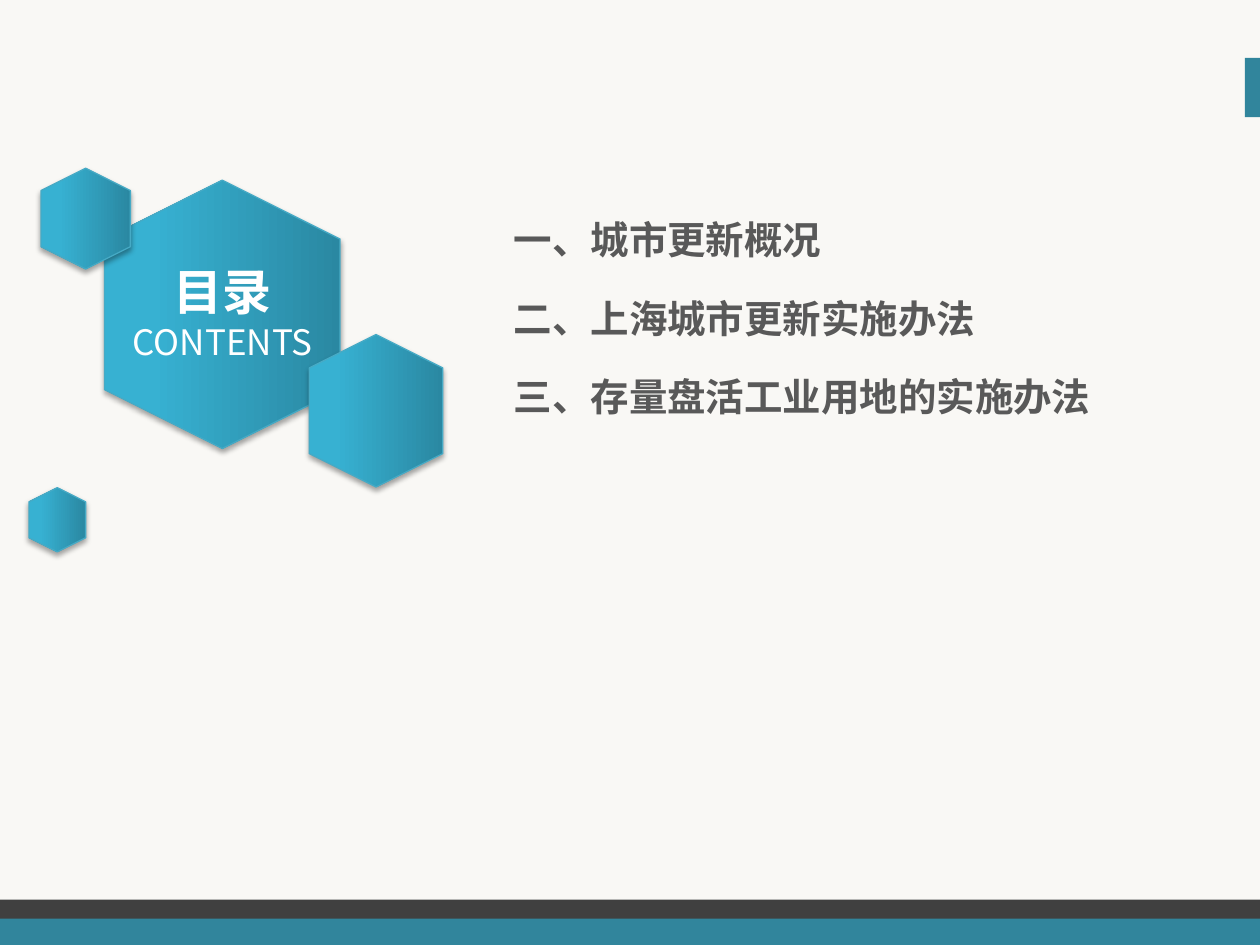
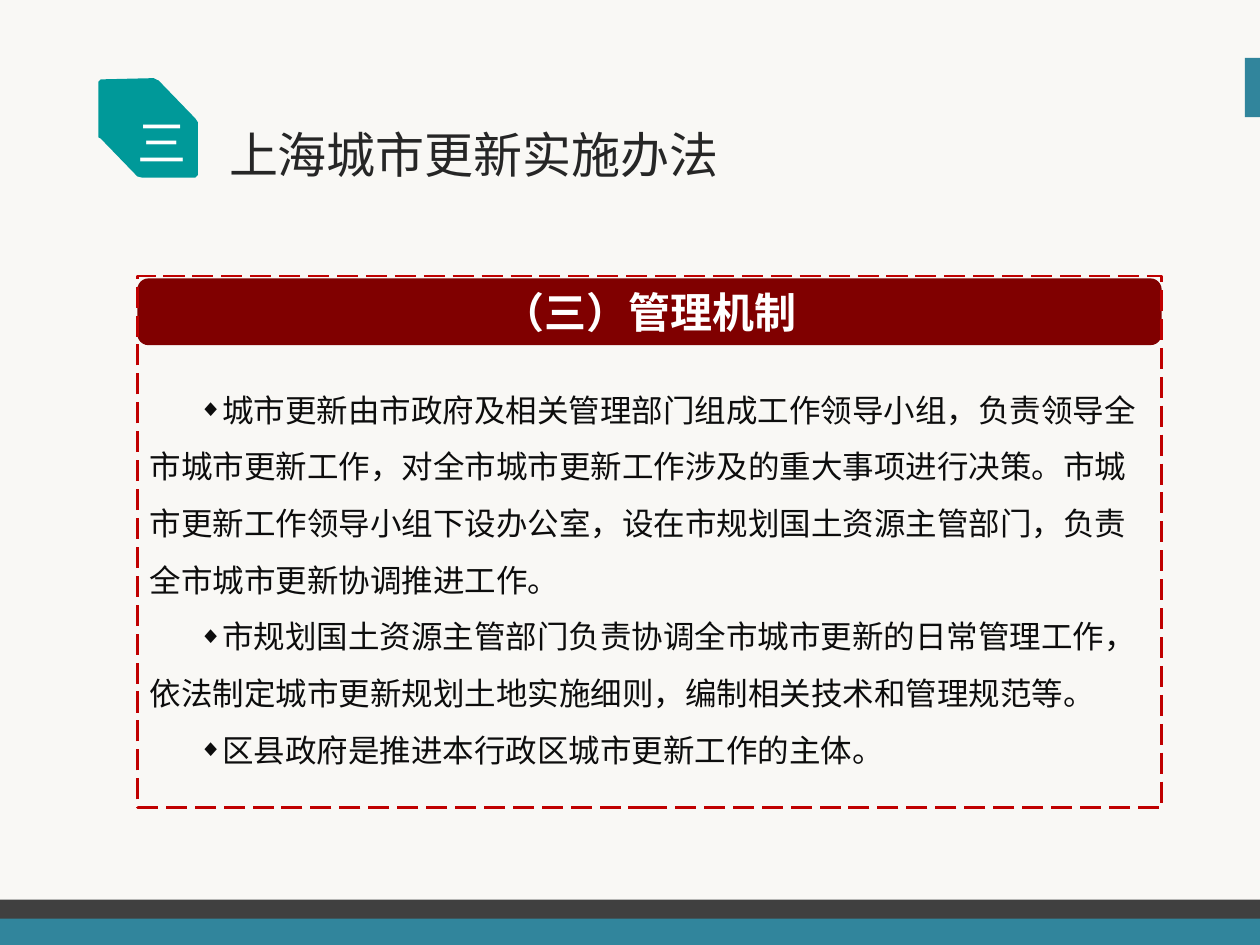
from lxml import etree
from pptx import Presentation
from pptx import util as u
from pptx.dml import color
from pptx.enum import dml, shapes, text
from pptx.oxml import ns

COLORS = {
    "paper": "F9F8F5", "charcoal": "404040", "teal": "31859C",
    "hex_dark": "2A88A2", "hex_light": "37B1D2", "hex_edge": "46AAC5",
    "badge": "009999", "header": "800000", "frame": "C00000",
    "white": "FFFFFF", "entry": "595959", "title": "262626",
    "body": "0D0D0D", "shadow": "000000",
}
CJK = "Noto Sans CJK SC"
ALIGN = text.PP_ALIGN
SHAPE = shapes.MSO_SHAPE
BANDS = [
    ((0, 7.14, 10, 0.16), "charcoal"),
    ((0, 7.29, 10, 0.21), "teal"),
    ((9.88, 0.46, 0.12, 0.47), "teal"),
]
BADGE_OUTLINE = [
    (0, 0.03), (0.02, 0.01), (0.44, 0), (0.48, 0.02), (0.77, 0.32), (0.79, 0.35),
    (0.79, 0.77), (0.77, 0.79), (0.35, 0.79), (0.31, 0.78), (0.02, 0.48), (0, 0.47),
]


def rgb(name):
    return color.RGBColor.from_string(COLORS[name])


def inches(box):
    return [u.Inches(length) for length in box]


def set_format(target, **values):
    for name, value in values.items():
        setattr(target, name, value)


def add_xml(parent, tag, **attributes):
    return etree.SubElement(parent, ns.qn(tag), **attributes)


def fill_plain(shape, fill):
    shape.shadow.inherit = False
    shape.line.fill.background()
    shape.fill.solid()
    shape.fill.fore_color.rgb = rgb(fill)


def add_block(page, box, fill, kind=SHAPE.RECTANGLE):
    shape = page.shapes.add_shape(kind, *inches(box))
    fill_plain(shape, fill)
    return shape


def write(para, words, size, fill, font=CJK, bold=False, **layout):
    set_format(para, **layout)
    span = para.add_run()
    span.text = words
    set_format(span.font, name=font, size=u.Pt(size), bold=bold)
    span.font.color.rgb = rgb(fill)
    add_xml(span.font._element, "a:ea", typeface=CJK)


def next_para(frame, index):
    return frame.add_paragraph() if index else frame.paragraphs[0]


def add_words(page, box, wrap=True):
    frame = page.shapes.add_textbox(*inches(box)).text_frame
    frame.word_wrap = wrap
    return frame


def add_page(deck):
    page = deck.slides.add_slide(deck.slide_layouts[6])
    page.background.fill.solid()
    page.background.fill.fore_color.rgb = rgb("paper")
    for box, fill in BANDS:
        add_block(page, box, fill)
    return page


def add_hexagon(page, box):
    hexagon = page.shapes.add_shape(SHAPE.HEXAGON, *inches(box))
    hexagon.rotation = 270
    hexagon.fill.gradient()
    hexagon.fill.gradient_angle = 90
    stops = [(0, "hex_dark"), (0.8, "hex_light")]
    for stop, (position, fill) in zip(hexagon.fill.gradient_stops, stops):
        stop.position = position
        stop.color.rgb = rgb(fill)
    hexagon.line.color.rgb = rgb("hex_edge")
    hexagon.line.width = u.Pt(0.75)
    effects = add_xml(hexagon._element.spPr, "a:effectLst")
    shadow = add_xml(effects, "a:outerShdw", blurRad=str(u.Pt(3.1)),
                     dist=str(u.Pt(1.8)), dir="5400000", rotWithShape="0")
    tint = add_xml(shadow, "a:srgbClr", val=COLORS["shadow"])
    add_xml(tint, "a:alpha", val="35000")


def add_contents_emblem(page, left, top):
    def place(x, y, width, height):
        return left + x, top + y, width, height

    add_hexagon(page, place(0.5, 0.18, 2.13, 1.87))
    frame = add_words(page, place(0.69, 0.65, 1.75, 0.92))
    write(frame.paragraphs[0], "目录", 28, "white", bold=True, alignment=ALIGN.CENTER)
    write(frame.add_paragraph(), "CONTENTS", 20, "white", alignment=ALIGN.CENTER)
    for box in [(2.18, 1.35, 1.21, 1.06), (0.08, 0, 0.8, 0.71), (0, 2.52, 0.51, 0.45)]:
        add_hexagon(page, place(*box))


def add_entries(page, box, entries):
    frame = add_words(page, box)
    for index, entry in enumerate(entries):
        write(next_para(frame, index), entry, 22, "entry", bold=True,
              alignment=ALIGN.JUSTIFY, line_spacing=1.7)


def add_section_title(page, left, top, number, title):
    points = [(u.Inches(left + x), u.Inches(top + y)) for x, y in BADGE_OUTLINE]
    outline = page.shapes.build_freeform(*points[0])
    outline.add_line_segments(points[1:], close=True)
    fill_plain(outline.convert_to_shape(), "badge")
    frame = add_words(page, (left + 0.21, top + 0.22, 0.59, 0.57), wrap=False)
    write(frame.paragraphs[0], number, 28, "white", "Arial")
    frame = add_words(page, (left + 0.94, top + 0.27, 4.13, 0.56), wrap=False)
    write(frame.paragraphs[0], title, 28, "title", "Arial",
          line_spacing=1.1, space_before=u.Pt(8))


def add_bullet(para):
    properties = para._p.get_or_add_pPr()
    properties.set("marL", "0")
    properties.set("indent", str(u.Inches(0.39)))
    add_xml(properties, "a:buSzPct", val="75000")
    add_xml(properties, "a:buFont", typeface="Arial")
    add_xml(properties, "a:buChar", char="◆")


def add_panel(page, box, heading, points):
    left, top, width, height = box
    header = add_block(page, (left, top + 0.02, width, 0.53), "header",
                       SHAPE.ROUNDED_RECTANGLE)
    margin = u.Inches(0.04)
    set_format(header.text_frame, word_wrap=True,
               vertical_anchor=text.MSO_ANCHOR.MIDDLE,
               margin_left=margin, margin_right=margin,
               margin_top=margin, margin_bottom=margin)
    write(header.text_frame.paragraphs[0], heading, 24, "white", bold=True,
          alignment=ALIGN.CENTER)

    panel = page.shapes.add_shape(SHAPE.RECTANGLE, *inches(box))
    panel.shadow.inherit = False
    panel.fill.background()
    panel.line.color.rgb = rgb("frame")
    set_format(panel.line, width=u.Pt(1.5), dash_style=dml.MSO_LINE.LONG_DASH)
    frame = panel.text_frame
    set_format(frame, word_wrap=True, margin_top=u.Inches(0.5),
               vertical_anchor=text.MSO_ANCHOR.MIDDLE)
    for index, point in enumerate(points):
        para = next_para(frame, index)
        write(para, point, 18, "body", "Calibri",
              alignment=ALIGN.LEFT, line_spacing=1.5)
        add_bullet(para)


def build_contents(deck):
    page = add_page(deck)
    add_contents_emblem(page, 0.2, 1.38)
    add_entries(page, (3.98, 1.41, 5.31, 1.99), [
        "一、城市更新概况",
        "二、上海城市更新实施办法",
        "三、存量盘活工业用地的实施办法",
    ])


def build_management(deck):
    page = add_page(deck)
    add_section_title(page, 0.78, 0.62, "三", "上海城市更新实施办法")
    add_panel(page, (1.09, 2.19, 8.13, 4.22), "（三）管理机制", [
        "城市更新由市政府及相关管理部门组成工作领导小组，负责领导全市城市更新工作，"
        "对全市城市更新工作涉及的重大事项进行决策。市城市更新工作领导小组下设办公室，"
        "设在市规划国土资源主管部门，负责全市城市更新协调推进工作。",
        "市规划国土资源主管部门负责协调全市城市更新的日常管理工作，"
        "依法制定城市更新规划土地实施细则，编制相关技术和管理规范等。",
        "区县政府是推进本行政区城市更新工作的主体。",
    ])


def main():
    deck = Presentation()
    set_format(deck, slide_width=u.Inches(10), slide_height=u.Inches(7.5))
    build_contents(deck)
    build_management(deck)
    deck.save("out.pptx")


if __name__ == "__main__":
    main()
